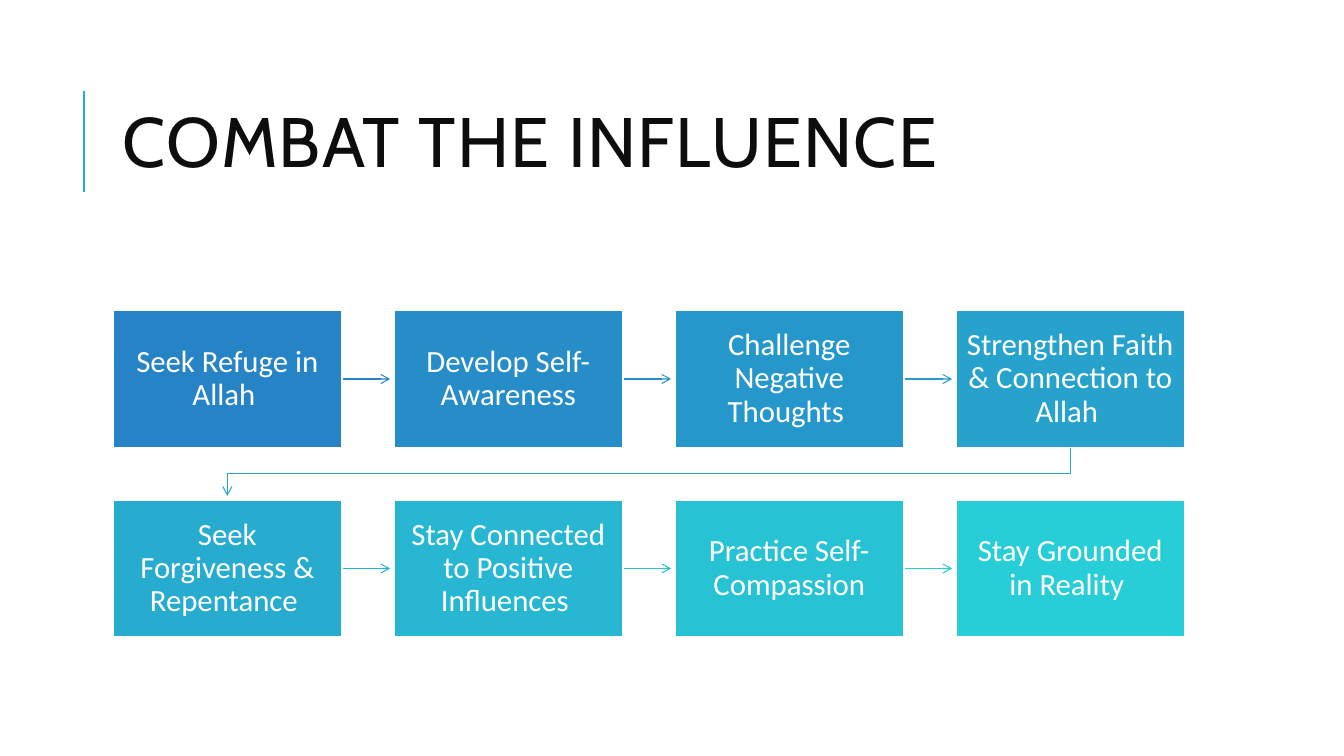
from lxml import etree
from pptx import Presentation
from pptx.dml.color import RGBColor
from pptx.enum.shapes import MSO_CONNECTOR, MSO_SHAPE
from pptx.enum.text import MSO_ANCHOR, PP_ALIGN
from pptx.oxml.ns import qn
from pptx.util import Emu, Pt

STRAIGHT = MSO_CONNECTOR.STRAIGHT
RECT = MSO_SHAPE.RECTANGLE
MIDDLE = MSO_ANCHOR.MIDDLE
LEFT, CENTER = PP_ALIGN.LEFT, PP_ALIGN.CENTER

SCALE = 9144  # EMU per px, 100 px to the inch
COLUMNS = 4
BOX_W, BOX_H = 227, 136
ARROW_LEN = 48

# Step text, box fill, colour of the arrow to the next step
STEPS = [
    ("Seek Refuge in Allah ", "2683C6", "2683C6"),
    ("Develop Self-Awareness", "268DC8", "268FC9"),
    ("Challenge Negative Thoughts ", "2697CB", "269BCC"),
    ("Strengthen Faith & Connection to Allah ", "26A2CD", "27A7CE"),
    ("Seek Forgiveness & Repentance ", "27ACD0", "27B4D1"),
    ("Stay Connected to Positive Influences ", "27B7D2", "27C1D4"),
    ("Practice Self-Compassion", "27C3D5", "27CED7"),
    ("Stay Grounded in Reality ", "27CED7", None),
]


def px(n):
    return Emu(round(n * SCALE))


def rgb(value):
    return RGBColor.from_string(value)


def set_line(shape, color, width):
    shape.line.color.rgb = rgb(color)
    shape.line.width = Pt(width)


def add_arrowhead(shape):
    ln = shape.line._get_or_add_ln()
    etree.SubElement(ln, qn("a:tailEnd"), type="arrow")


def add_line(s, x1, y1, x2, y2, color, width):
    c = s.shapes.add_connector(STRAIGHT, px(x1), px(y1), px(x2), px(y2))
    set_line(c, color, width)
    etree.SubElement(c._element.spPr, qn("a:effectLst"))
    return c


def set_text(sp, text, font, size, color, align, spacing, inset_x, inset_y):
    tf = sp.text_frame
    tf.word_wrap = True
    tf.vertical_anchor = MIDDLE
    tf.margin_left = tf.margin_right = px(inset_x)
    tf.margin_top = tf.margin_bottom = px(inset_y)
    p = tf.paragraphs[0]
    p.alignment = align
    p.line_spacing = spacing
    r = p.add_run()
    r.text = text
    r.font.name = font
    r.font.size = Pt(size)
    r.font.color.rgb = rgb(color)
    return r


def add_title(s, x, y, w, h):
    # Accent rule left of the title
    add_line(s, x - 29, y + 126, x - 29, y + 26, "1CADE4", 1.5)
    sp = s.shapes.add_textbox(px(x), px(y), px(w), px(h))
    r = set_text(sp, "COMBAT THE INFLUENCE", "Cabin", 50, "0D0D0D", LEFT, 0.8, 10, 5)
    r.font._element.set("spc", "100")


def add_step(s, x, y, text, fill):
    sp = s.shapes.add_shape(RECT, px(x), px(y), px(BOX_W), px(BOX_H))
    sp.shadow.inherit = False
    sp.fill.solid()
    sp.fill.fore_color.rgb = rgb(fill)
    set_line(sp, "FFFFFF", 1.25)
    set_text(sp, text, "Calibri", 22, "FFFFFF", CENTER, 0.9, 11, 12)


def add_row_return(s, x1, y1, x2, y2, color):
    """Bent arrow from the end of one row to the start of the next."""
    mid = y1 + 26
    fb = s.shapes.build_freeform(px(x1), px(y1))
    fb.add_line_segments(
        [(px(x1), px(mid)), (px(x2), px(mid)), (px(x2), px(y2))], close=False)
    sp = fb.convert_to_shape()
    sp.shadow.inherit = False
    sp.fill.background()
    set_line(sp, color, 0.75)
    add_arrowhead(sp)


def add_process(s, x, y, w, h):
    step_x = (w - BOX_W) / (COLUMNS - 1)
    step_y = h - BOX_H
    for i, (text, fill, arrow) in enumerate(STEPS):
        row, col = divmod(i, COLUMNS)
        left, top = x + col * step_x, y + row * step_y
        # Arrow to the next step, behind the box
        if arrow and col < COLUMNS - 1:
            right, mid = left + BOX_W, top + BOX_H / 2
            add_arrowhead(add_line(s, right, mid, right + ARROW_LEN, mid, arrow, 0.75))
        elif arrow:
            add_row_return(s, left + BOX_W / 2, top + BOX_H,
                           x + BOX_W / 2, top + step_y - 4, arrow)
        add_step(s, left, top, text, fill)


def main():
    prs = Presentation()
    prs.slide_width, prs.slide_height = px(1333), px(750)
    s = prs.slides.add_slide(prs.slide_layouts[6])
    add_title(s, 112, 64, 1063, 164)
    add_process(s, 112, 308, 1063, 324)
    prs.save("out.pptx")


if __name__ == "__main__":
    main()
